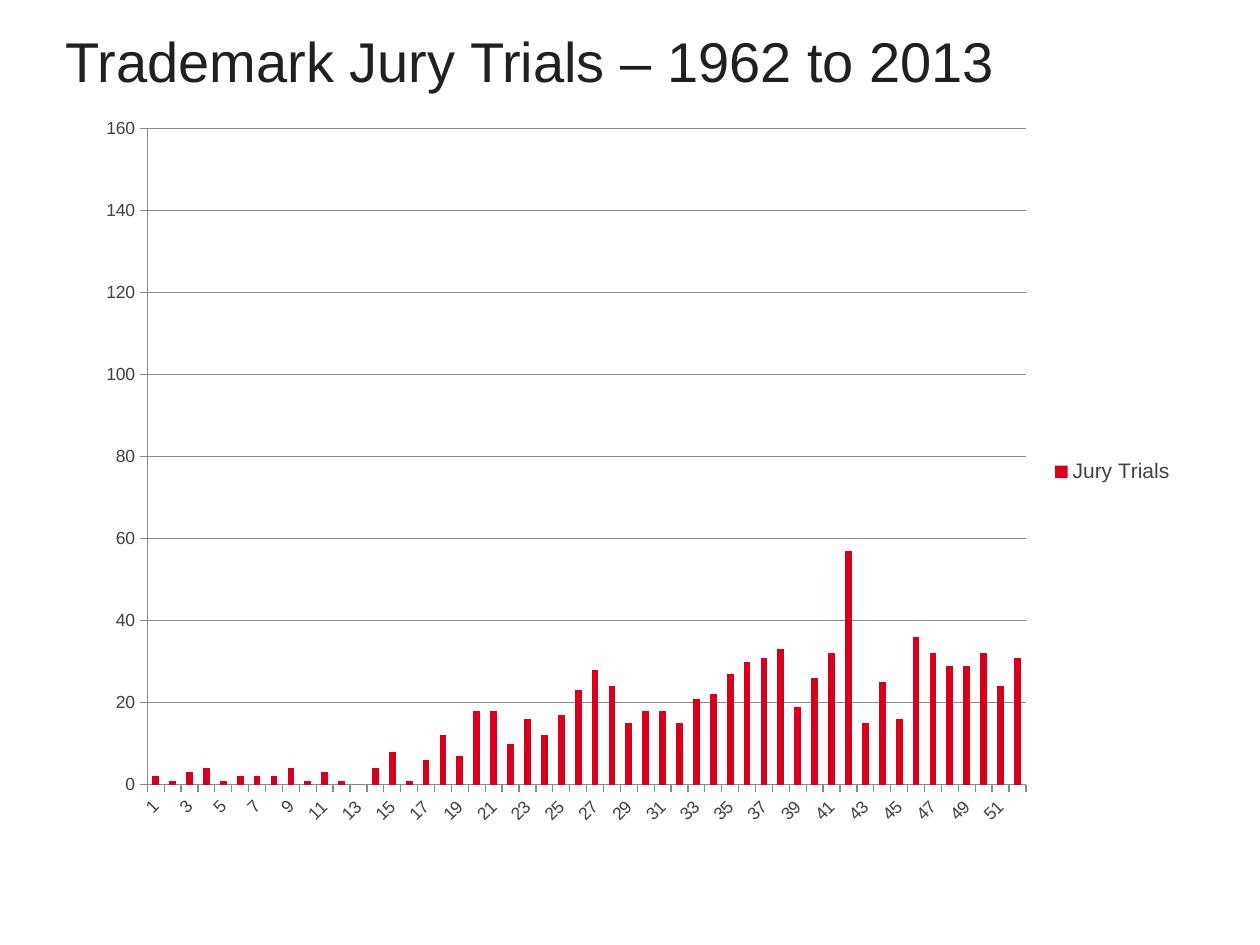
"""Build a slide with a column chart of trademark jury trials by year."""
from lxml.etree import SubElement
from pptx import Presentation
from pptx.chart.data import CategoryChartData
from pptx.dml.color import RGBColor
from pptx.enum.chart import XL_CHART_TYPE, XL_LEGEND_POSITION, XL_TICK_MARK
from pptx.enum.text import MSO_ANCHOR, PP_ALIGN
from pptx.oxml import parse_xml
from pptx.oxml.ns import nsdecls, qn
from pptx.util import Inches, Pt

WIDTH, HEIGHT = Inches(10), Inches(7.5)
FONT = "Arial"
COLORS = {"title": "202021", "text": "414042", "bar": "D6001C", "line": "8B8B8B"}
TRIALS = [
    2, 1, 3, 4, 1, 2, 2, 2, 4, 1, 3, 1, 0,
    4, 8, 1, 6, 12, 7, 18, 18, 10, 16, 12, 17, 23,
    28, 24, 15, 18, 18, 15, 21, 22, 27, 30, 31, 33, 19,
    26, 32, 57, 15, 25, 16, 36, 32, 29, 29, 32, 24, 31,
]
PLOT = {"x": 0.057, "y": 0.033, "w": 0.797, "h": 0.893}


def color(name):
    return RGBColor.from_string(COLORS[name])


def style(font, size, name):
    font.name, font.size, font.bold = FONT, Pt(size), False
    font.color.rgb = color(name)


def rule(line):
    line.color.rgb = color("line")
    line.width = Pt(0.75)


def add_title(slide, text):
    title = slide.shapes.title
    title.left, title.top = Inches(0.52), Inches(0.25)
    title.width, title.height = Inches(8.96), Inches(0.51)
    frame = title.text_frame
    frame.text = text
    frame.word_wrap = True
    frame.vertical_anchor = MSO_ANCHOR.MIDDLE
    frame.margin_left = frame.margin_right = 0
    frame.margin_top = frame.margin_bottom = 0
    para = frame.paragraphs[0]
    para.alignment = PP_ALIGN.LEFT
    para.line_spacing = 0.95
    style(para.runs[0].font, 32, "title")


def place_plot(chart):
    area = chart._chartSpace.find(".//" + qn("c:plotArea"))
    for old in area.findall(qn("c:layout")):
        area.remove(old)
    layout = parse_xml(f"<c:layout {nsdecls('c')}><c:manualLayout/></c:layout>")
    modes = {"layoutTarget": "inner", "xMode": "edge", "yMode": "edge"}
    for tag, val in {**modes, **PLOT}.items():
        SubElement(layout[0], qn("c:" + tag)).set("val", str(val))
    area.insert(0, layout)


def format_axes(chart):
    cats, vals = chart.category_axis, chart.value_axis
    for axis in (cats, vals):
        axis.major_tick_mark = XL_TICK_MARK.OUTSIDE
        axis.minor_tick_mark = XL_TICK_MARK.NONE
        style(axis.tick_labels.font, 10, "text")
        rule(axis.format.line)
    cats.has_major_gridlines = False
    vals.minimum_scale, vals.maximum_scale, vals.major_unit = 0, 160, 20
    vals.has_major_gridlines = True
    rule(vals.major_gridlines.format.line)
    node = cats._element
    node.find(qn("c:txPr")).find(qn("a:bodyPr")).set("rot", "-2700000")
    skip = parse_xml(f'<c:tickLblSkip {nsdecls("c")} val="2"/>')
    node.find(qn("c:noMultiLvlLbl")).addprevious(skip)


def add_chart(slide):
    data = CategoryChartData()
    data.categories = [str(num) for num in range(1, len(TRIALS) + 1)]
    data.add_series("Jury Trials", TRIALS)
    chart = slide.shapes.add_chart(
        XL_CHART_TYPE.COLUMN_STACKED, Inches(0.67), Inches(0.83),
        Inches(8.75), Inches(5.83), data,
    ).chart
    style(chart.font, 10, "text")
    chart.has_title = False
    chart.has_legend = True
    chart.legend.position = XL_LEGEND_POSITION.RIGHT
    chart.legend.include_in_layout = False
    style(chart.legend.font, 12, "text")
    plot = chart.plots[0]
    plot.gap_width, plot.overlap = 150, 100
    plot.vary_by_categories = False
    fill = plot.series[0].format.fill
    fill.solid()
    fill.fore_color.rgb = color("bar")
    format_axes(chart)
    place_plot(chart)


def main():
    deck = Presentation()
    deck.slide_width, deck.slide_height = WIDTH, HEIGHT
    slide = deck.slides.add_slide(deck.slide_layouts[5])
    add_title(slide, "Trademark Jury Trials – 1962 to 2013")
    add_chart(slide)
    deck.save("out.pptx")


if __name__ == "__main__":
    main()
